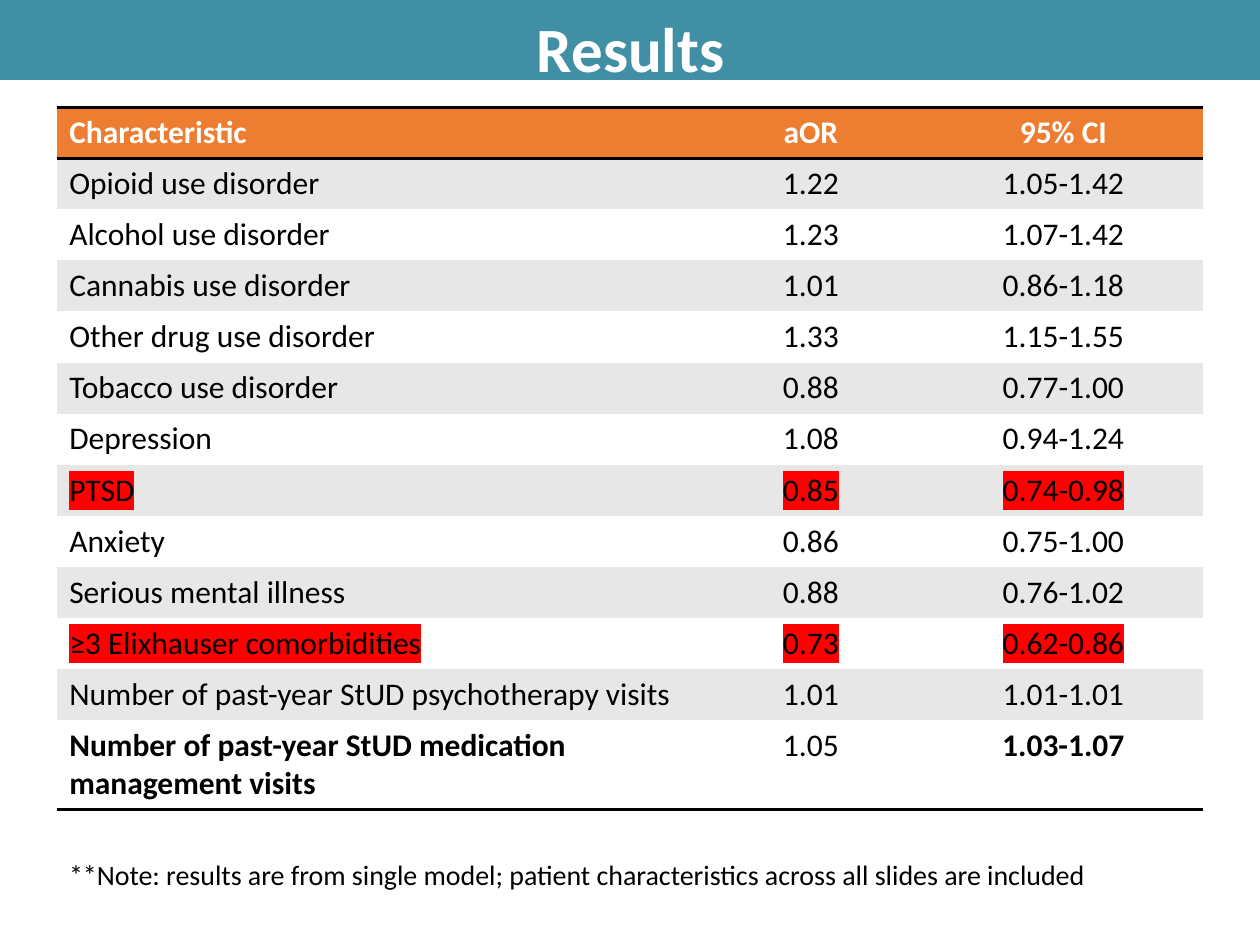
from pptx import Presentation
from pptx.dml.color import RGBColor
from pptx.enum.shapes import MSO_SHAPE
from pptx.enum.text import MSO_ANCHOR, PP_ALIGN
from pptx.oxml.ns import qn
from pptx.util import Pt
from lxml.etree import SubElement

TEAL = RGBColor(0x40, 0x8F, 0xA4)
ORANGE = RGBColor(0xED, 0x7D, 0x31)
GREY = RGBColor(0xE7, 0xE7, 0xE7)
WHITE = RGBColor(0xFF, 0xFF, 0xFF)
BLACK = RGBColor(0x00, 0x00, 0x00)
RED = RGBColor(0xFF, 0x00, 0x00)

HEADER = ("Characteristic", "aOR", "95% CI")
RESULTS = [
    ("Opioid use disorder", "1.22", "1.05-1.42"),
    ("Alcohol use disorder", "1.23", "1.07-1.42"),
    ("Cannabis use disorder", "1.01", "0.86-1.18"),
    ("Other drug use disorder", "1.33", "1.15-1.55"),
    ("Tobacco use disorder", "0.88", "0.77-1.00"),
    ("Depression", "1.08", "0.94-1.24"),
    ("PTSD", "0.85", "0.74-0.98"),
    ("Anxiety", "0.86", "0.75-1.00"),
    ("Serious mental illness", "0.88", "0.76-1.02"),
    ("≥3 Elixhauser comorbidities", "0.73", "0.62-0.86"),
    ("Number of past-year StUD psychotherapy visits", "1.01", "1.01-1.01"),
    ("Number of past-year StUD medication management visits", "1.05", "1.03-1.07"),
]
HIGHLIGHTED = ("PTSD", "≥3 Elixhauser comorbidities")
COLUMN_WIDTHS = (366.6, 128.8, 159.8)
ROW_HEIGHT = 29.2
LAST_ROW_HEIGHT = 50.4


def write(frame, text, size, color, bold=False, align=PP_ALIGN.LEFT):
    """Fill a text frame with one paragraph and return its run."""
    paragraph = frame.paragraphs[0]
    paragraph.alignment = align
    run = paragraph.add_run()
    run.text = text
    font = paragraph.font
    font.name, font.size, font.bold = "Calibri", Pt(size), bold
    font.color.rgb = color
    return run


def highlight(run, color):
    mark = SubElement(run.font._element, qn("a:highlight"))
    SubElement(mark, qn("a:srgbClr"), val=str(color))


def set_borders(cell, ruled_sides):
    """Rule the given sides in black and clear the others."""
    properties = cell._tc.get_or_add_tcPr()
    for side in "LRTB":
        line = SubElement(properties, qn(f"a:ln{side}"), w=str(Pt(2)))
        if side in ruled_sides:
            fill = SubElement(line, qn("a:solidFill"))
            SubElement(fill, qn("a:srgbClr"), val=str(BLACK))
        else:
            SubElement(line, qn("a:noFill"))


def add_banner(slide, left, top, width, height):
    banner = slide.shapes.add_shape(
        MSO_SHAPE.RECTANGLE, Pt(left), Pt(top), Pt(width), Pt(height))
    banner.shadow.inherit = False
    banner.fill.solid()
    banner.fill.fore_color.rgb = TEAL
    banner.line.color.rgb = TEAL
    banner.line.width = Pt(2)
    frame = banner.text_frame
    frame.vertical_anchor = MSO_ANCHOR.TOP
    frame.margin_top, frame.margin_bottom = Pt(5.7), Pt(0)
    write(frame, "Results", 36, WHITE, True, PP_ALIGN.CENTER)


def add_results_table(slide, left, top, width, height):
    rows = [HEADER] + RESULTS
    last = len(rows) - 1
    table = slide.shapes.add_table(
        len(rows), len(HEADER), Pt(left), Pt(top), Pt(width), Pt(height)).table
    for column, column_width in zip(table.columns, COLUMN_WIDTHS):
        column.width = Pt(column_width)

    for r, values in enumerate(rows):
        table.rows[r].height = Pt(LAST_ROW_HEIGHT if r == last else ROW_HEIGHT)
        # Rules above and below the header, and below the last row
        ruled_sides = ("T" if r in (0, 1) else "") + ("B" if r in (0, last) else "")
        band = ORANGE if r == 0 else GREY if r % 2 else WHITE
        for c, value in enumerate(values):
            cell = table.cell(r, c)
            set_borders(cell, ruled_sides)
            cell.fill.solid()
            cell.fill.fore_color.rgb = band
            run = write(
                cell.text_frame, value, 18,
                WHITE if r == 0 else BLACK,
                r == 0 or (r == last and c != 1),
                PP_ALIGN.CENTER if c else PP_ALIGN.LEFT)
            if values[0] in HIGHLIGHTED:
                highlight(run, RED)


def add_note(slide, left, top, width, height):
    note = slide.shapes.add_textbox(Pt(left), Pt(top), Pt(width), Pt(height))
    note.text_frame.word_wrap = True
    write(note.text_frame,
          "**Note: results are from single model; patient characteristics "
          "across all slides are included", 16, BLACK)


def main():
    presentation = Presentation()
    presentation.slide_width, presentation.slide_height = Pt(720), Pt(540)
    slide = presentation.slides.add_slide(presentation.slide_layouts[6])
    add_banner(slide, 0, 0, 720.7, 44.6)
    add_results_table(slide, 32.4, 61.2, sum(COLUMN_WIDTHS),
                      ROW_HEIGHT * len(RESULTS) + LAST_ROW_HEIGHT)
    add_note(slide, 32.4, 486.7, 655.2, 26.6)
    presentation.save("out.pptx")


if __name__ == "__main__":
    main()
